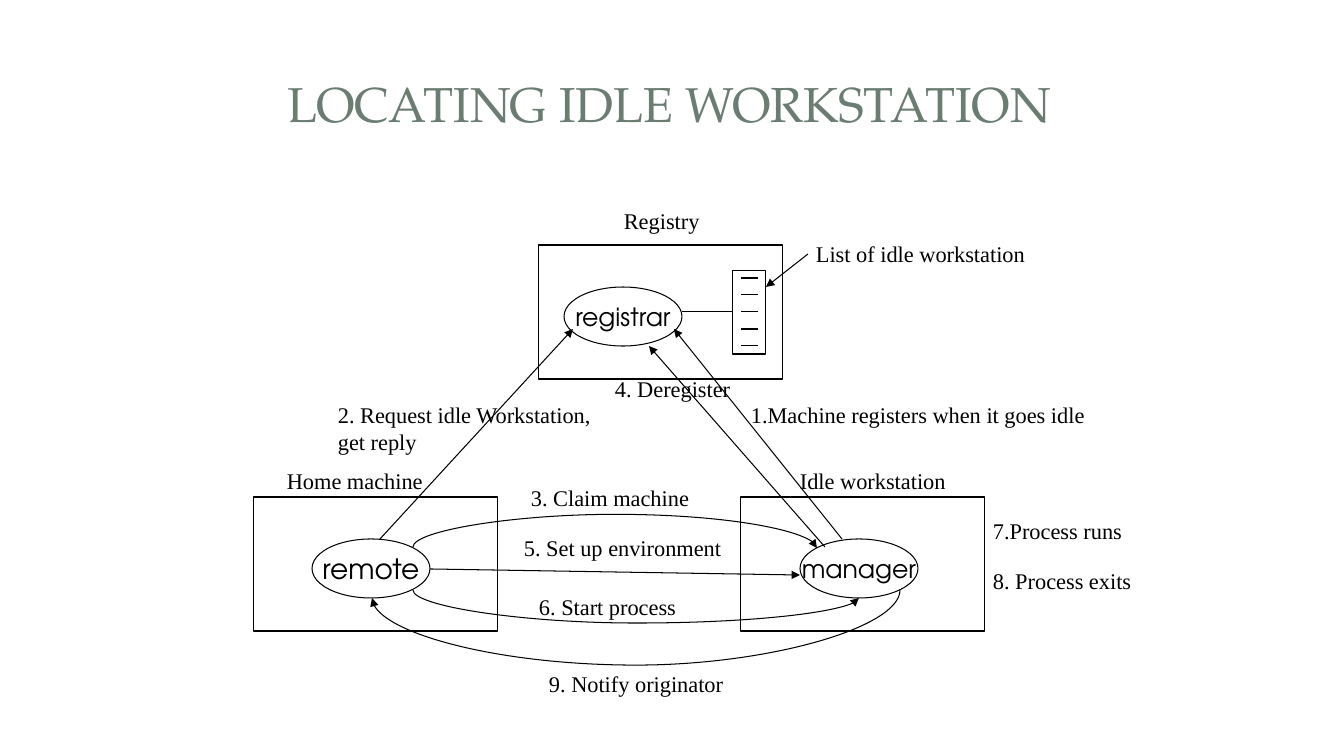
from lxml import etree
from pptx import Presentation
from pptx.dml.color import RGBColor
from pptx.enum.shapes import MSO_CONNECTOR, MSO_SHAPE
from pptx.enum.text import MSO_ANCHOR, PP_ALIGN
from pptx.oxml.ns import qn
from pptx.util import Pt

RECT, OVAL = MSO_SHAPE.RECTANGLE, MSO_SHAPE.OVAL
STRAIGHT, CURVE = MSO_CONNECTOR.STRAIGHT, MSO_CONNECTOR.CURVE
MIDDLE, CENTER, LEFT = MSO_ANCHOR.MIDDLE, PP_ALIGN.CENTER, PP_ALIGN.LEFT

THEME = {
    "title": ("TeX Gyre Pagella", 35, RGBColor(0x6B, 0x7D, 0x72)),
    "label": ("Times New Roman", 16, RGBColor(0, 0, 0)),
    "node": ("TeX Gyre Adventor", 18, RGBColor(0, 0, 0)),
    "node_large": ("TeX Gyre Adventor", 20, RGBColor(0, 0, 0)),
    "ink": RGBColor(0, 0, 0),
    "paper": RGBColor(255, 255, 255),
    "line": Pt(0.75),
}
PX = 12192000 / 1344  # EMU per px

prs = Presentation()
prs.slide_width, prs.slide_height = round(1344 * PX), round(756 * PX)
slide = prs.slides.add_slide(prs.slide_layouts[6])
shapes = slide.shapes


def write(s, text, style, align=LEFT, wrap=False):
    tf = s.text_frame
    tf.text = text
    tf.word_wrap = wrap
    p = tf.paragraphs[0]
    p.alignment = align
    font = p.runs[0].font
    name, size, font.color.rgb = THEME[style]
    font.name, font.size = name, Pt(size)
    return tf


def connect(kind, x1, y1, x2, y2, arrow=True):
    s = shapes.add_connector(kind, *(round(v * PX) for v in (x1, y1, x2, y2)))
    s.line.color.rgb = THEME["ink"]
    s.line.width = THEME["line"]
    if arrow:
        etree.SubElement(s.line._get_or_add_ln(), qn("a:tailEnd"), type="triangle")
    etree.SubElement(s._element.spPr, qn("a:effectLst"))
    return s


# Title
s = shapes.add_textbox(*(round(v * PX) for v in (62, 45, 1215, 115)))
write(s, "LOCATING IDLE WORKSTATION", "title", CENTER, True).vertical_anchor = MIDDLE

# Machines, their processes and the registry list
outlines = [
    (RECT, 539, 245, 244, 134, "", ""),
    (OVAL, 564, 287, 118, 59, "registrar", "node"),
    (RECT, 254, 497, 244, 134, "", ""),
    (OVAL, 312, 539, 118, 59, "remote", "node_large"),
    (RECT, 741, 497, 244, 134, "", ""),
    (OVAL, 800, 539, 118, 59, "manager", "node"),
    (RECT, 733, 270, 33, 84, "", ""),
]
for kind, x, y, w, h, text, style in outlines:
    s = shapes.add_shape(kind, *(round(v * PX) for v in (x, y, w, h)))
    s.shadow.inherit = False
    s.fill.solid()
    s.fill.fore_color.rgb = THEME["paper"]
    s.line.color.rgb = THEME["ink"]
    s.line.width = THEME["line"]
    if text:
        write(s, text, style, CENTER).vertical_anchor = MIDDLE

# List entries and the link from the registrar
for i in range(5):
    y = 278 + 17 * i
    connect(STRAIGHT, 741, y, 758, y, arrow=False)
connect(STRAIGHT, 682, 312, 733, 312, arrow=False)

# Straight arrows
for ends in [
    (380, 539, 573, 329),
    (808, 254, 766, 287),
    (842, 539, 674, 329),
    (825, 547, 649, 346),
    (430, 569, 800, 575),
]:
    connect(STRAIGHT, *ends)

# Curved arrows leave vertically: a quarter-turned connector that bends at y = bend
for x1, y1, x2, y2, bend in [
    (413, 547, 817, 548, 514),
    (413, 590, 859, 598, 623),
    (900, 590, 372, 598, 665),
]:
    cx, cy = (x1 + x2) / 2, (y1 + y2) / 2
    half_w, half_h = (y2 - y1) / 2, abs(x2 - x1) / 2
    s = connect(CURVE, cx - half_w, cy - half_h, cx + half_w, cy + half_h)
    xfrm = s._element.spPr.find(qn("a:xfrm"))
    xfrm.set("rot", str(90 * 60000))
    if x2 > x1:
        xfrm.set("flipV", "1")
    adjust = round((bend - y1) / (y2 - y1) * 100000)
    guides = s._element.spPr.find(qn("a:prstGeom")).find(qn("a:avLst"))
    etree.SubElement(guides, qn("a:gd"), name="adj1", fmla=f"val {adjust}")

# Labels
for x, y, w, text in [
    (614, 202, 97, "Registry"),
    (741, 396, 356, "1.Machine registers when it goes idle"),
    (277, 462, 157, "Home machine"),
    (806, 235, 231, "List of idle workstation"),
    (605, 370, 136, "4. Deregister"),
    (790, 462, 167, "Idle workstation"),
    (983, 512, 150, "7.Process runs"),
    (983, 562, 159, "8. Process exits"),
    (521, 479, 179, "3. Claim machine"),
    (539, 665, 196, "9. Notify originator"),
    (514, 529, 219, "5. Set up environment"),
    (529, 588, 158, "6. Start process"),
]:
    s = shapes.add_textbox(*(round(v * PX) for v in (x, y, w, 37)))
    write(s, text, "label")
s = shapes.add_textbox(*(round(v * PX) for v in (328, 396, 285, 65)))
write(s, "2. Request idle Workstation, get reply", "label", wrap=True)

prs.save("out.pptx")
